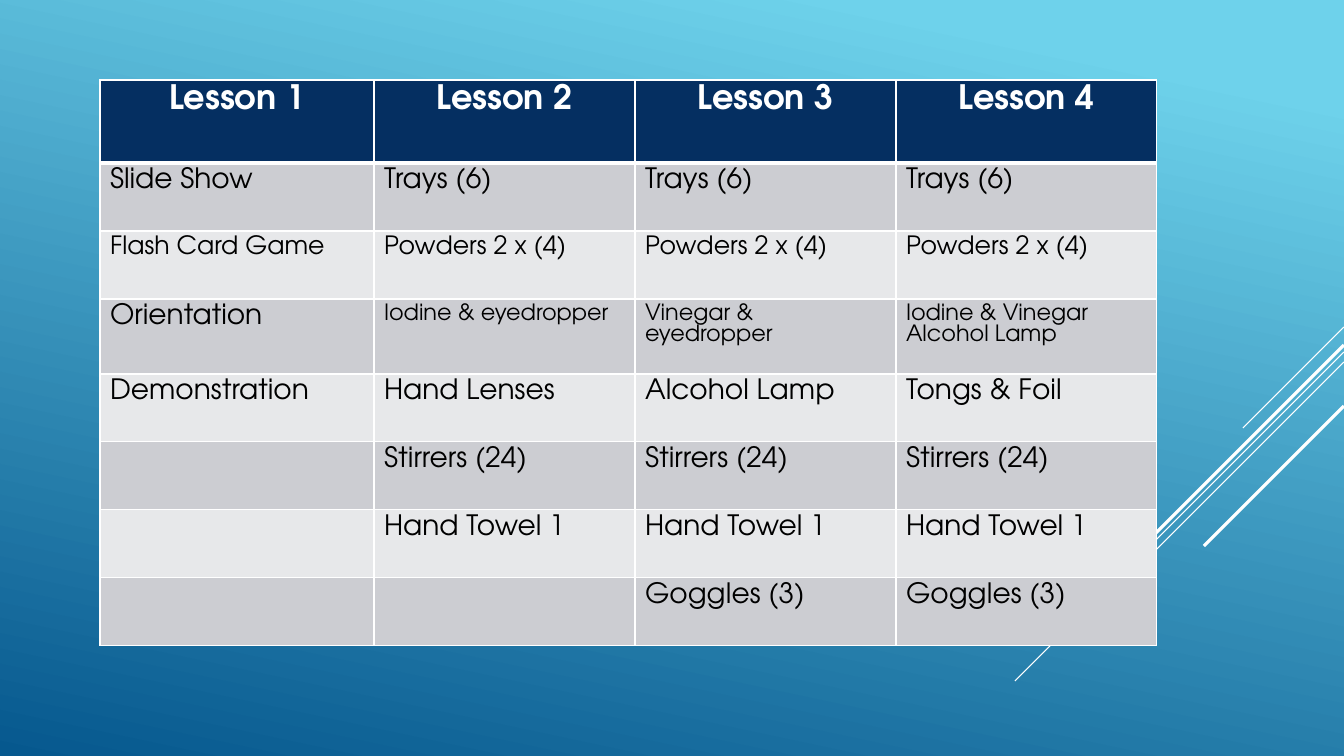
from lxml.etree import SubElement
from pptx import Presentation
from pptx.dml.color import RGBColor as Color
from pptx.enum.shapes import MSO_CONNECTOR as Connector
from pptx.enum.text import PP_ALIGN as Align
from pptx.oxml.ns import qn
from pptx.util import Emu, Pt

PX = 914400 / 100.8
WIDTH, HEIGHT = 1344, 756
FONT = "TeX Gyre Adventor"
COLORS = {
    "sky": "6ED2EB", "deep": "06588E", "white": "FFFFFF", "black": "000000",
    "header": "052F61", "odd": "CCCDD2", "even": "E7E8EA",
}
LESSONS = [
    ["Lesson 1", "Lesson 2", "Lesson 3", "Lesson 4"],
    ["Slide Show"] + ["Trays (6)"] * 3,
    ["Flash Card Game"] + ["Powders 2 x (4)"] * 3,
    ["Orientation", "Iodine & eyedropper", "Vinegar & eyedropper",
     "Iodine & Vinegar\nAlcohol Lamp"],
    ["Demonstration", "Hand Lenses", "Alcohol Lamp", "Tongs & Foil"],
    [""] + ["Stirrers (24)"] * 3,
    [""] + ["Hand Towel 1"] * 3,
    ["", ""] + ["Goggles (3)"] * 2,
]
COLUMN_WIDTHS = [274, 261, 261, 261]
ROW_HEIGHTS = [83, 68, 68, 75, 68, 68, 68, 68]
# top at the right edge, run to the lower left, line width in points
DIAGONALS = [(327, 101, 0.75), (352, 329, 0.75), (362, 209, 0.75),
             (345, 193, 2.25), (406, 140, 2.25)]


def px(length):
    return Emu(round(length * PX))


def color(name):
    return Color.from_string(COLORS[name])


def text_size(row, column):
    if row == 0:
        return 24
    if row == 2:
        return 18
    return 16 if row == 3 and column > 0 else 20


class LessonPage:
    def __init__(self, deck):
        self.page = deck.slides.add_slide(deck.slide_layouts[6])

    def background(self, start, end, angle):
        """Fill the page with a gradient; the angle runs clockwise."""
        fill = self.page.background.fill
        fill.gradient()
        fill.gradient_angle = 360 - angle
        for stop, name, position in zip(fill.gradient_stops, (start, end), (0.1, 1)):
            stop.color.rgb = color(name)
            stop.position = position

    def diagonal(self, top, run, width):
        line = self.page.shapes.add_connector(
            Connector.STRAIGHT, px(WIDTH), px(top), px(WIDTH - run), px(top + run))
        line.line.color.rgb = color("white")
        line.line.width = Pt(width)
        SubElement(line.element.spPr, qn("a:effectLst"))

    def table(self, left, top, rows):
        frame = self.page.shapes.add_table(
            len(rows), len(COLUMN_WIDTHS), px(left), px(top),
            px(sum(COLUMN_WIDTHS)), px(sum(ROW_HEIGHTS)))
        table = frame.table
        for column, width in zip(table.columns, COLUMN_WIDTHS):
            column.width = px(width)
        for row, height in zip(table.rows, ROW_HEIGHTS):
            row.height = px(height)
        for r, texts in enumerate(rows):
            for c, text in enumerate(texts):
                self.cell(table.cell(r, c), text, r, c)

    def cell(self, cell, text, row, column):
        header = row == 0
        cell.text = text
        for para in cell.text_frame.paragraphs:
            para.alignment = Align.CENTER if header else Align.LEFT
            para.font.name = FONT
            para.font.size = Pt(text_size(row, column))
            para.font.bold = header
            para.font.color.rgb = color("white" if header else "black")
        self.borders(cell, top=3 if row == 1 else 1, bottom=3 if header else 1)
        cell.fill.solid()
        cell.fill.fore_color.rgb = color(
            "header" if header else "odd" if row % 2 else "even")

    def borders(self, cell, top, bottom):
        properties = cell._tc.get_or_add_tcPr()
        for side, width in (("L", 1), ("R", 1), ("T", top), ("B", bottom)):
            border = SubElement(properties, qn(f"a:ln{side}"), w=str(Pt(width)))
            fill = SubElement(border, qn("a:solidFill"))
            SubElement(fill, qn("a:srgbClr"), val=COLORS["white"])


def main():
    deck = Presentation()
    deck.slide_width, deck.slide_height = px(WIDTH), px(HEIGHT)
    page = LessonPage(deck)
    page.background("sky", "deep", 102)
    for diagonal in DIAGONALS:
        page.diagonal(*diagonal)
    page.table(100, 80, LESSONS)
    deck.save("out.pptx")


if __name__ == "__main__":
    main()
